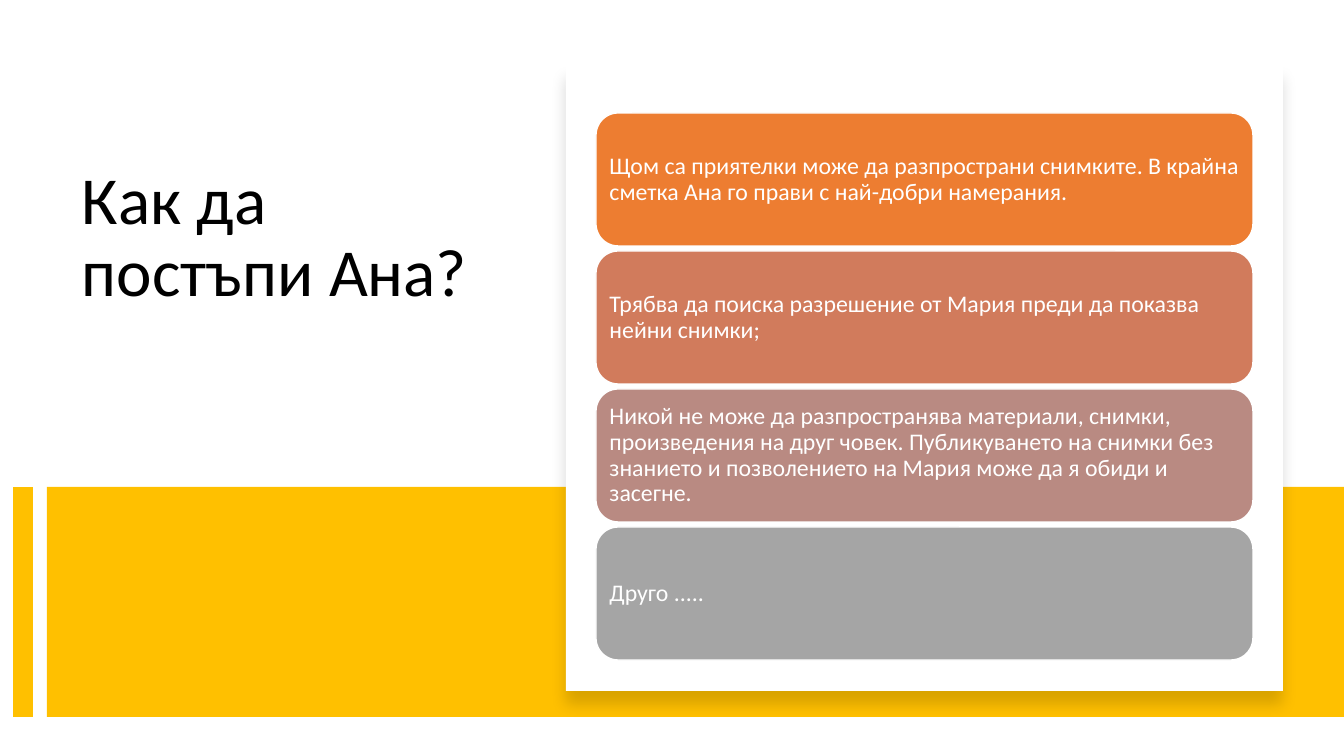
"""Builds the slide asking how Ana should act, with four possible answers."""
from lxml import etree
from pptx import Presentation
from pptx import util as u
from pptx.dml.color import RGBColor
from pptx.enum import shapes, text
from pptx.oxml.ns import qn

PX = 914400 / 100.8
COLORS = {
    "black": "000000",
    "white": "FFFFFF",
    "band": "FFC000",
    "share": "ED7D31",
    "ask": "D17B5C",
    "respect": "B98A82",
    "other": "A5A5A5",
}


def px(*lengths):
    return [u.Emu(round(length * PX)) for length in lengths]


def write(frame, words, size, color, inset, anchor):
    frame.word_wrap = True
    frame.vertical_anchor = anchor
    frame.margin_left, frame.margin_top, frame.margin_right, frame.margin_bottom = px(*inset)
    paragraph = frame.paragraphs[0]
    paragraph.alignment = text.PP_ALIGN.LEFT
    paragraph.line_spacing = 0.9
    run = paragraph.add_run()
    run.text = words
    run.font.size = u.Pt(size)
    run.font.name = "Calibri"
    run.font.color.rgb = RGBColor.from_string(COLORS[color])


deck = Presentation()
deck.slide_width, deck.slide_height = px(1344, 756)
slide = deck.slides.add_slide(deck.slide_layouts[6])

question = slide.shapes.add_textbox(*px(72, 161, 418, 296))
write(question.text_frame, "Как да постъпи Ана?", size=48, color="black",
      inset=(10, 5, 10, 5), anchor=text.MSO_ANCHOR.TOP)

band = slide.shapes.add_shape(shapes.MSO_SHAPE.RECTANGLE, *px(47, 487, 1297, 230))
card = slide.shapes.add_shape(shapes.MSO_SHAPE.RECTANGLE, *px(566, 65, 717, 626))
for panel, color in ((band, "band"), (card, "white")):
    panel.shadow.inherit = False
    panel.fill.solid()
    panel.fill.fore_color.rgb = RGBColor.from_string(COLORS[color])
    panel.line.fill.background()

card_effects = card._element.spPr.find(qn("a:effectLst"))
card_shadow = etree.SubElement(
    card_effects, qn("a:outerShdw"), blurRad=str(u.Pt(11)), dist=str(u.Pt(10)),
    dir="5400000", algn="t", rotWithShape="0")
shadow_color = etree.SubElement(card_shadow, qn("a:srgbClr"), val=COLORS["black"])
etree.SubElement(shadow_color, qn("a:alpha"), val="15000")

stripe = slide.shapes.add_connector(shapes.MSO_CONNECTOR.STRAIGHT, *px(23, 487, 23, 717))
stripe.line.color.rgb = RGBColor.from_string(COLORS["band"])
stripe.line.width = u.Pt(14)
etree.SubElement(stripe._element.spPr, qn("a:effectLst"))

answers = [
    ("share", "Щом са приятелки може да разпространи снимките. "
              "В крайна сметка Ана го прави с най-добри намерания."),
    ("ask", "Трябва да поиска разрешение от Мария преди да показва нейни снимки;"),
    ("respect", "Никой не може да разпространява материали, снимки, произведения "
                "на друг човек. Публикуването на снимки без знанието и позволението "
                "на Мария може да я обиди и засегне."),
    ("other", "Друго ....."),
]
for row, (color, words) in enumerate(answers):
    answer = slide.shapes.add_shape(
        shapes.MSO_SHAPE.ROUNDED_RECTANGLE, *px(596, 113 + 138 * row, 657, 133))
    answer.shadow.inherit = False
    answer.fill.solid()
    answer.fill.fore_color.rgb = RGBColor.from_string(COLORS[color])
    answer.line.color.rgb = RGBColor.from_string(COLORS["white"])
    answer.line.width = u.Pt(1)
    write(answer.text_frame, words, size=17, color="white",
          inset=(7, 7, 7, 7), anchor=text.MSO_ANCHOR.MIDDLE)

deck.save("out.pptx")
